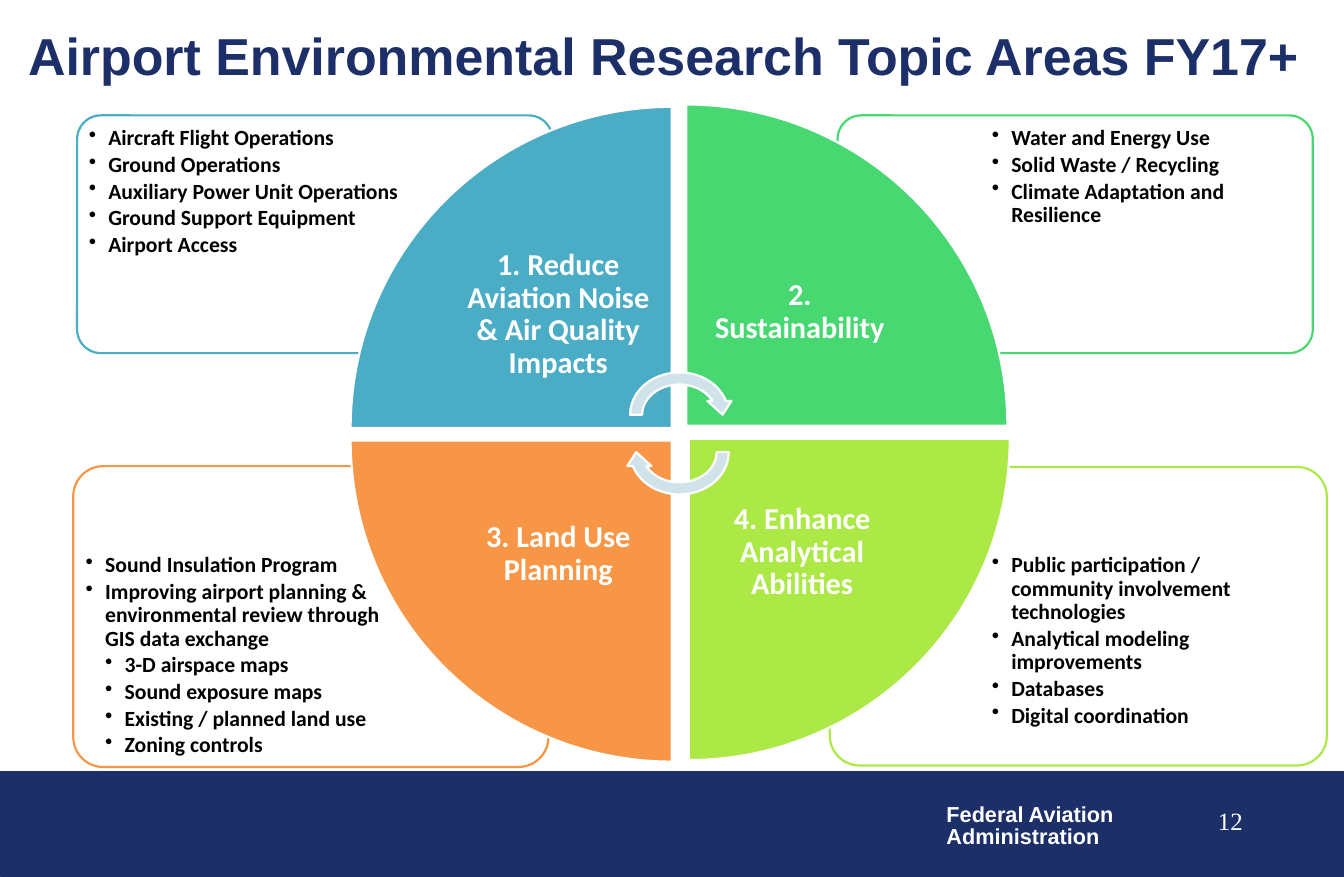
import dataclasses

import pptx
import pptx.dml.color
import pptx.enum.shapes
import pptx.enum.text
import pptx.oxml
import pptx.oxml.ns
import pptx.util

Inches = pptx.util.Inches
Pt = pptx.util.Pt
Kind = pptx.enum.shapes.MSO_SHAPE
Align = pptx.enum.text.PP_ALIGN
Anchor = pptx.enum.text.MSO_ANCHOR
Box = tuple[float, float, float, float]

NAVY, WHITE, BLACK, PALE = "1D2F68", "FFFFFF", "000000", "D0E3EA"
SIDE, INSET = 4.12, 1.21  # wedge size, and gap between its round side and its label


@dataclasses.dataclass
class Topic:
    label: str
    hue: str
    turn: int
    wedge: tuple[float, float]
    panel: Box
    body: Box
    items: list[str]  # a leading tab marks a second-level item


TOPICS = [
    Topic("4. Enhance Analytical Abilities", "ACE946", 180, (8.84, 5.63),
          (10.65, 5.99, 6.38, 3.83), (12.65, 7.03, 4.3, 2.7),
          ["Public participation / \ncommunity involvement technologies",
           "Analytical modeling improvements", "Databases", "Digital coordination"]),
    Topic("3. Land Use Planning", "F79646", 270, (4.5, 5.65),
          (0.94, 5.98, 6.1, 3.86), (1.02, 7.03, 4.1, 2.73),
          ["Sound Insulation Program",
           "Improving airport planning & environmental review through GIS data exchange",
           "\t3-D airspace maps", "\tSound exposure maps",
           "\tExisting / planned land use", "\tZoning controls"]),
    Topic("2. Sustainability", "47D872", 90, (8.81, 1.34),
          (10.75, 1.48, 6.1, 3.05), (12.65, 1.55, 4.14, 2.15),
          ["Water and Energy Use", "Solid Waste / Recycling",
           "Climate Adaptation and Resilience"]),
    Topic("1. Reduce Aviation Noise & Air Quality Impacts", "4BACC6", 0, (4.5, 1.37),
          (0.99, 1.48, 6.1, 3.05), (1.06, 1.55, 4.14, 2.15),
          ["Aircraft Flight Operations", "Ground Operations",
           "Auxiliary Power Unit Operations", "Ground Support Equipment",
           "Airport Access"]),
]


def color(code: str) -> pptx.dml.color.RGBColor:
    return pptx.dml.color.RGBColor.from_string(code)


def draw(slide, kind, box: Box, fill: str, line: str, width: float = 2, turn: int = 0):
    shape = slide.shapes.add_shape(kind, *map(Inches, box))
    shape.shadow.inherit = False
    shape.fill.solid()
    shape.fill.fore_color.rgb = color(fill)
    shape.line.color.rgb = color(line)
    shape.line.width = Pt(width)
    shape.rotation = turn
    return shape


def fade(shape, share: int) -> None:
    tint = shape.fill._xPr.find(".//" + pptx.oxml.ns.qn("a:srgbClr"))
    tint.append(pptx.oxml.parse_xml(
        f'<a:alpha {pptx.oxml.ns.nsdecls("a")} val="{share * 1000}"/>'))


def bullet(para, level: int) -> None:
    para.level = level
    props = para._p.get_or_add_pPr()
    props.set("marL", str(Inches(0.25 * level)))
    props.set("indent", str(Inches(-0.25)))
    props.append(pptx.oxml.parse_xml(
        f'<a:buChar {pptx.oxml.ns.nsdecls("a")} char="•"/>'))


def write(slide, box: Box, lines: list[str], *, size: float, hue: str,
          font: str = "Calibri", bold: bool = True, align=Align.LEFT,
          anchor=Anchor.TOP, pad: tuple[float, float] = (0.08, 0.08),
          lead: float = 1, after: float = 0, bullets: bool = False,
          wrap: bool = True) -> None:
    frame = slide.shapes.add_textbox(*map(Inches, box)).text_frame
    frame.word_wrap = wrap
    frame.vertical_anchor = anchor
    frame.margin_left = frame.margin_right = Inches(pad[0])
    frame.margin_top = frame.margin_bottom = Inches(pad[1])
    for i, line in enumerate(lines):
        para = frame.add_paragraph() if i else frame.paragraphs[0]
        if bullets:
            bullet(para, 2 if line.startswith("\t") else 1)
        para.text = line.lstrip("\t")
        para.alignment = align
        para.line_spacing = lead
        para.space_after = Pt(after)
        for run in para.runs:
            run.font.name = font
            run.font.size = Pt(size)
            run.font.bold = bold
            run.font.color.rgb = color(hue)


def main() -> None:
    deck = pptx.Presentation()
    deck.slide_width, deck.slide_height = Inches(17.25), Inches(11.25)
    slide = deck.slides.add_slide(deck.slide_layouts[6])

    # Footer band
    draw(slide, Kind.RECTANGLE, (0, 9.9, 17.25, 1.34), NAVY, NAVY, 0.75)
    write(slide, (12.05, 10.28, 2.36, 0.67), ["Federal Aviation", "Administration"],
          size=20, hue=WHITE, font="Arial", lead=0.85, pad=(0.1, 0.05), wrap=False)

    # Corner panels with their lists
    for topic in TOPICS:
        panel = draw(slide, Kind.ROUNDED_RECTANGLE, topic.panel, WHITE, topic.hue)
        panel.adjustments[0] = 0.1
        fade(panel, 90)
        write(slide, topic.body, topic.items, size=20, hue=BLACK,
              lead=0.9, after=3, bullets=True)

    # Wedges, each labelled toward the centre
    for topic in reversed(TOPICS):
        x, y = topic.wedge
        draw(slide, Kind.PIE_WEDGE, (x, y, SIDE, SIDE), topic.hue, WHITE, turn=topic.turn)
        left = x + (INSET if topic.turn in (0, 270) else 0)
        top = y + (INSET if topic.turn in (0, 90) else 0)
        write(slide, (left, top, SIDE - INSET, SIDE - INSET), [topic.label],
              size=28, hue=WHITE, align=Align.CENTER, anchor=Anchor.MIDDLE,
              pad=(0.22, 0.22), lead=0.9)

    # Cycle arrows
    for top, turn in ((4.7, 0), (5.18, 180)):
        draw(slide, Kind.CIRCULAR_ARROW, (8.01, top, 1.42, 1.24), PALE, WHITE, turn=turn)

    # Title and page number
    write(slide, (0.2, 0.2, 16.85, 1), ["Airport Environmental Research Topic Areas FY17+"],
          size=48, hue=NAVY, font="Arial", anchor=Anchor.MIDDLE, pad=(0.16, 0.08))
    write(slide, (12.52, 10.25, 3.59, 0.75), ["12"], size=23, hue=WHITE,
          font="Times New Roman", bold=False, align=Align.RIGHT, pad=(0.16, 0.08))

    deck.save("out.pptx")


if __name__ == "__main__":
    main()
